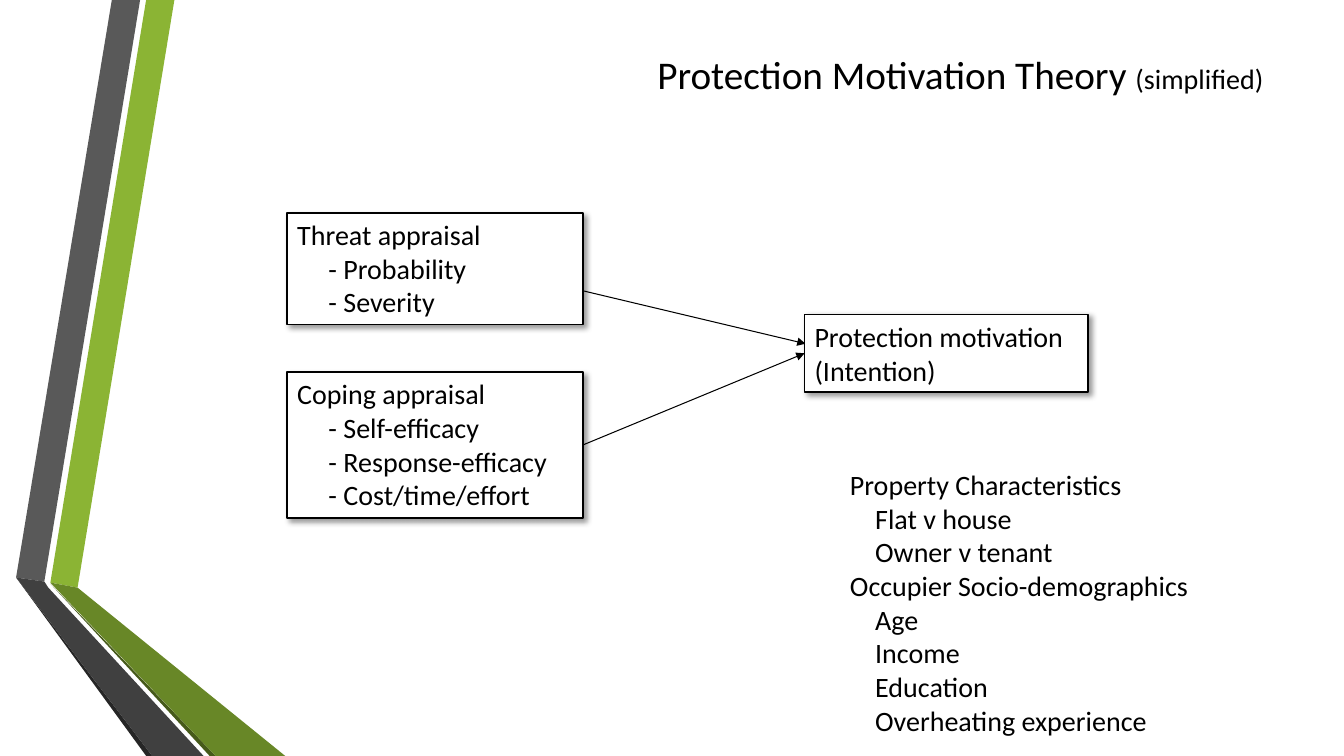
from dataclasses import dataclass

from lxml import etree
from pptx import Presentation
from pptx import util as u
from pptx.dml.color import RGBColor
from pptx.enum import shapes, text
from pptx.oxml.ns import qn

PX = 9144  # EMU per px, 100 px to the inch
FONT = "Calibri"
BLACK = RGBColor(0x00, 0x00, 0x00)
WHITE = RGBColor(0xFF, 0xFF, 0xFF)
LIME = RGBColor(0x8B, 0xB4, 0x34)
LIME_DARK = RGBColor(0x68, 0x87, 0x27)
LIME_EDGE = RGBColor(0x46, 0x5A, 0x1A)
GREY = RGBColor(0x59, 0x59, 0x59)
GREY_DARK = RGBColor(0x40, 0x40, 0x40)
GREY_EDGE = RGBColor(0x26, 0x26, 0x26)


@dataclass(frozen=True)
class RibbonFace:
    color: RGBColor
    outline: tuple[tuple[int, int], ...]


@dataclass(frozen=True)
class ConceptBox:
    left: int
    top: int
    width: int
    height: int
    heading: str
    factors: tuple[str, ...] = ()


RIBBON = (
    RibbonFace(LIME, ((50, 578), (77, 583), (173, 0), (145, 0))),
    RibbonFace(GREY, ((139, 0), (111, 0), (16, 573), (44, 577))),
    RibbonFace(GREY_EDGE, ((16, 573), (145, 750), (151, 750))),
    RibbonFace(LIME_EDGE, ((50, 579), (208, 750), (214, 750))),
    RibbonFace(LIME_DARK, ((50, 578), (214, 750), (283, 750), (77, 583))),
    RibbonFace(GREY_DARK, ((202, 750), (48, 583), (44, 577), (16, 573), (151, 750))),
)
THREAT = ConceptBox(285, 211, 293, 111, "Threat appraisal", ("- Probability", "- Severity"))
COPING = ConceptBox(285, 369, 293, 145, "Coping appraisal",
                    ("- Self-efficacy", "- Response-efficacy", "- Cost/time/effort"))
MOTIVATION = ConceptBox(798, 312, 281, 77, "Protection motivation (Intention)")
CHARACTERISTICS = (
    ("Property Characteristics", 0),
    ("Flat v house", 25),
    ("Owner v tenant", 25),
    ("Occupier Socio-demographics", 0),
    ("Age", 25),
    ("Income", 25),
    ("Education", 25),
    ("Overheating experience", 25),
)


def place(shape, left: int, top: int, width: int, height: int) -> None:
    shape.left, shape.top = left * PX, top * PX
    shape.width, shape.height = width * PX, height * PX


def write_lines(frame, lines) -> None:
    """Fill a text frame with (wording, indent in px) paragraphs without bullets."""
    frame.word_wrap = True
    frame.auto_size = text.MSO_AUTO_SIZE.NONE
    frame.vertical_anchor = text.MSO_ANCHOR.TOP
    for index, (wording, indent) in enumerate(lines):
        para = frame.add_paragraph() if index else frame.paragraphs[0]
        para.text = wording
        para.alignment = text.PP_ALIGN.LEFT
        para.space_before = u.Pt(0)
        para.font.name, para.font.size = FONT, u.Pt(20)
        para.font.color.rgb = BLACK
        properties = para._p.get_or_add_pPr()
        properties.set("marL", str(indent * PX))
        properties.set("indent", "0")
        bullet = etree.Element(qn("a:buNone"))
        properties.find(qn("a:spcBef")).addnext(bullet)


def draw_ribbon_face(page, face: RibbonFace) -> None:
    builder = page.shapes.build_freeform(*face.outline[0], scale=PX)
    builder.add_line_segments(face.outline[1:], close=True)
    shape = builder.convert_to_shape()
    shape.shadow.inherit = False
    shape.fill.solid()
    shape.fill.fore_color.rgb = face.color
    shape.line.fill.background()


def draw_concept(page, concept: ConceptBox):
    box = page.shapes.add_shape(shapes.MSO_SHAPE.RECTANGLE, 0, 0, 0, 0)
    place(box, concept.left, concept.top, concept.width, concept.height)
    box.fill.solid()
    box.fill.fore_color.rgb = WHITE
    box.line.color.rgb = BLACK
    box.line.width = u.Pt(1.25)
    box.shadow.inherit = False
    effects = box._element.spPr.find(qn("a:effectLst"))
    shadow = etree.SubElement(effects, qn("a:outerShdw"), blurRad=str(u.Pt(4)),
                              dist=str(u.Pt(3)), dir="2700000", algn="tl", rotWithShape="0")
    tint = etree.SubElement(shadow, qn("a:srgbClr"), val=str(BLACK))
    etree.SubElement(tint, qn("a:alpha"), val="40000")
    write_lines(box.text_frame, [(concept.heading, 0), *((item, 31) for item in concept.factors)])
    return box


def draw_arrow(page, start: tuple[int, int], end: tuple[int, int]):
    arrow = page.shapes.add_connector(shapes.MSO_CONNECTOR.STRAIGHT,
                                      *(value * PX for value in start + end))
    arrow.line.color.rgb = BLACK
    arrow.line.width = u.Pt(0.75)
    properties = arrow._element.spPr
    etree.SubElement(properties.find(qn("a:ln")), qn("a:tailEnd"), type="triangle")
    etree.SubElement(properties, qn("a:effectLst"))
    return arrow


def fill_title(title) -> None:
    place(title, 642, 45, 653, 57)
    write_lines(title.text_frame, [("", 0)])
    para = title.text_frame.paragraphs[0]
    for wording, size in (("Protection Motivation Theory ", 28), ("(simplified)", 20)):
        span = para.add_run()
        span.text = wording
        span.font.size = u.Pt(size)


def fill_characteristics(body) -> None:
    place(body, 833, 459, 406, 279)
    body.fill.solid()
    body.fill.fore_color.rgb = WHITE
    write_lines(body.text_frame, CHARACTERISTICS)


def main() -> None:
    deck = Presentation()
    deck.slide_width, deck.slide_height = 1333 * PX, 750 * PX
    page = deck.slides.add_slide(deck.slide_layouts[1])
    fill_title(page.shapes.title)
    fill_characteristics(page.placeholders[1])
    for face in RIBBON:
        draw_ribbon_face(page, face)

    draw_arrow(page, (450, 258), (799, 341))
    draw_concept(page, THREAT)
    coping = draw_concept(page, COPING)
    motivation = draw_concept(page, MOTIVATION)
    coping_arrow = draw_arrow(page, (578, 442), (798, 350))
    coping_arrow.begin_connect(coping, 3)
    coping_arrow.end_connect(motivation, 1)
    deck.save("out.pptx")


if __name__ == "__main__":
    main()
